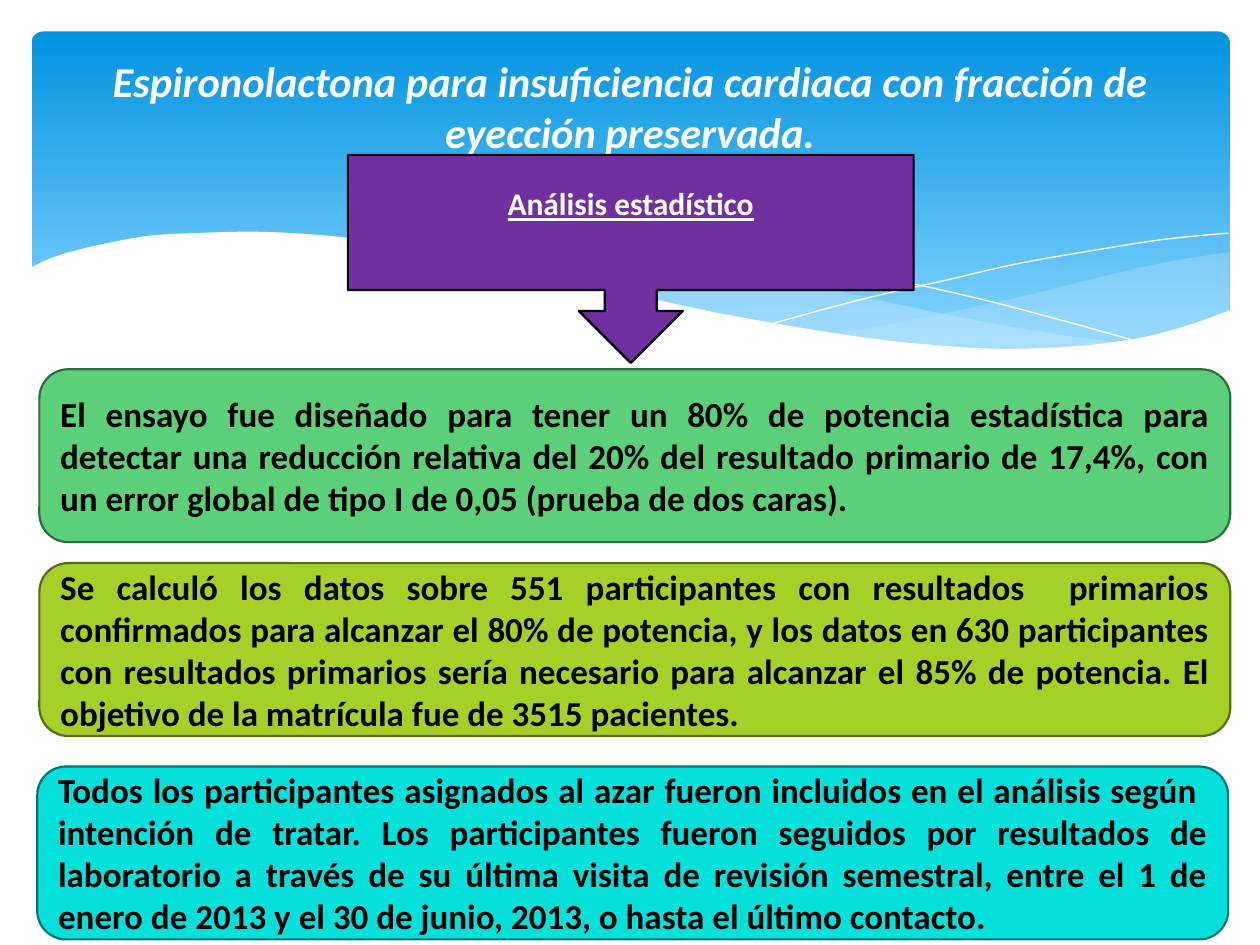
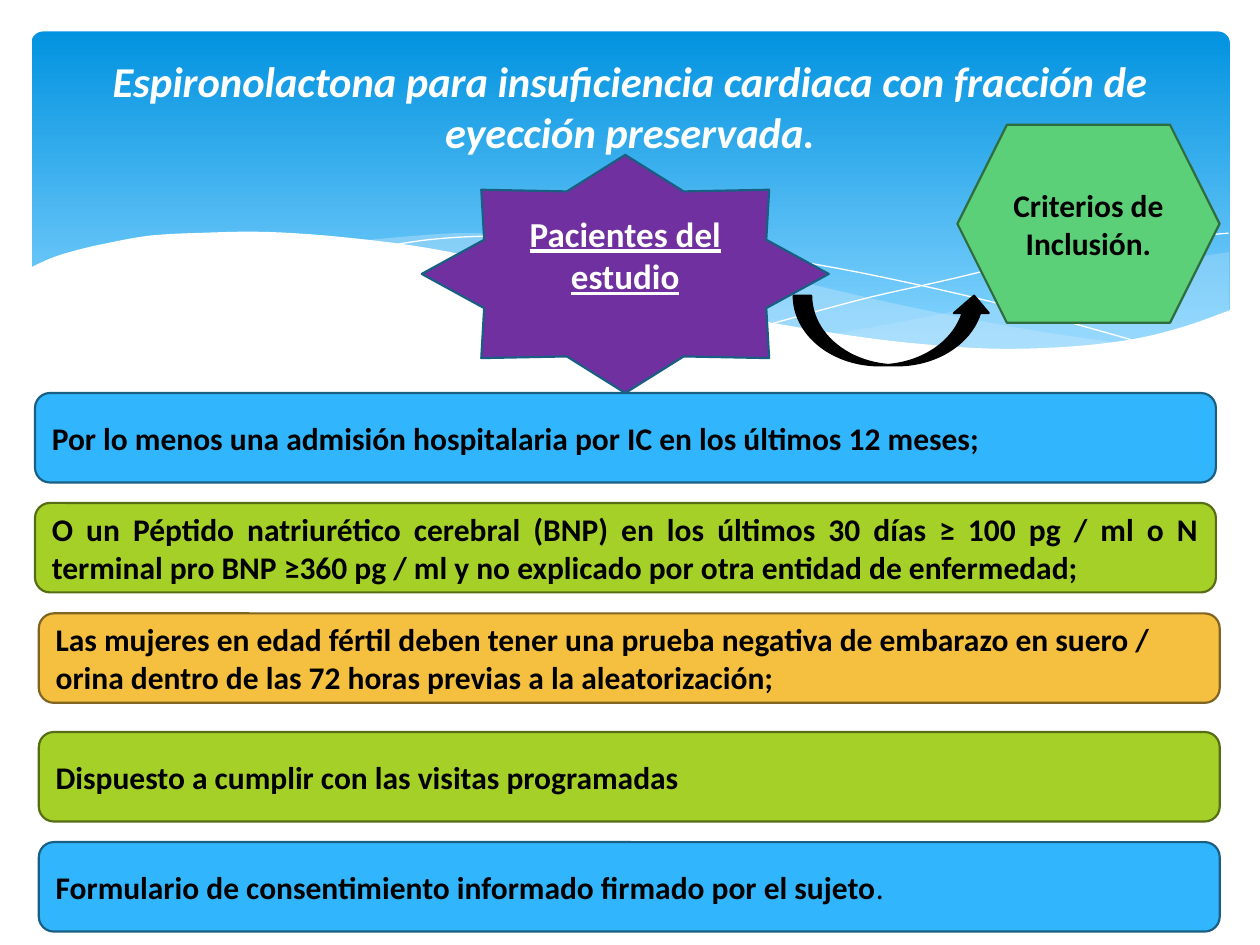
from dataclasses import dataclass

from lxml.etree import SubElement
from pptx import Presentation
from pptx.dml.color import RGBColor
from pptx.enum.shapes import MSO_SHAPE
from pptx.enum.text import MSO_ANCHOR, PP_ALIGN
from pptx.oxml.ns import qn
from pptx.util import Pt

TITLE = "Espironolactona para insuficiencia cardiaca con fracción de eyección preservada."
LEFT, JUSTIFY = PP_ALIGN.LEFT, PP_ALIGN.JUSTIFY

# Panels: text, left, top, colour, alignment
ANALYSIS_PANELS = [
    ("El ensayo fue diseñado para tener un 80% de potencia estadística para detectar una "
     "reducción relativa del 20% del resultado primario de 17,4%, con un error global de "
     "tipo I de 0,05 (prueba de dos caras).", 22.5, 211, "green", JUSTIFY),
    ("Se calculó los datos sobre 551 participantes con resultados  primarios confirmados "
     "para alcanzar el 80% de potencia, y los datos en 630 participantes con resultados "
     "primarios sería necesario para alcanzar el 85% de potencia. El objetivo de la "
     "matrícula fue de 3515 pacientes.", 22.5, 321.8, "lime", JUSTIFY),
    ("Todos los participantes asignados al azar fueron incluidos en el análisis según  "
     "intención de tratar. Los participantes fueron seguidos por resultados de laboratorio "
     "a través de su última visita de revisión semestral, entre el 1 de enero de 2013 y el "
     "30 de junio, 2013, o hasta el último contacto.", 21.3, 438, "cyan", JUSTIFY),
]
CRITERIA_PANELS = [
    ("Por lo menos una admisión hospitalaria por IC en los últimos 12 meses;",
     20, 224.6, "blue", LEFT),
    ("O un Péptido natriurético cerebral (BNP) en los últimos 30 días ≥ 100 pg / ml o N "
     "terminal pro BNP ≥360 pg / ml y no explicado por otra entidad de enfermedad;",
     20, 287.4, "lime", JUSTIFY),
    ("Las mujeres en edad fértil deben tener una prueba negativa de embarazo en suero / "
     "orina dentro de las 72 horas previas a la aleatorización;", 22.2, 350.5, "amber", LEFT),
    ("Dispuesto a cumplir con las visitas programadas", 22.2, 418.3, "lime", LEFT),
    ("Formulario de consentimiento informado firmado por el sujeto",
     22.2, 481.2, "blue", JUSTIFY),
]

# Knots of the smooth curves in the header band
RIGHT_VEIL = [
    [(702.5, 144), (663, 150.5), (620, 160.5), (579.5, 170.5), (525, 182), (476, 191)],
    [(476, 191), (508, 194.5), (536, 197.5), (562, 199.3), (586, 200), (615, 199.3),
     (640, 197.3), (663, 193.7), (683, 186.5), (702.5, 178)],
]
LEFT_VEIL = [
    [(643, 196.5), (603, 190.8), (558, 183), (508, 172.8), (453, 160), (410, 149.8),
     (370, 142.5), (335, 137.5), (302, 134.7), (274, 133.2), (248, 133.9), (206, 137.5)],
    [(206, 137.5), (246, 143.2), (291, 152), (323, 160), (382, 172.8), (433, 183.5),
     (479, 191.5), (520, 197), (557, 199.5), (589, 200), (617, 199.3), (643, 196.5)],
]
FALLING_LINE = [
    [(222.5, 140.4), (247, 136.8), (278.5, 135), (324, 135.4), (367, 138.2), (419, 144),
     (479, 153.4), (547, 167.8), (598, 180.7), (653, 196)],
]
RISING_LINE = [
    [(441, 185), (470, 177), (500, 169.2), (539, 160.5), (580, 151), (623.5, 143.3),
     (665, 136.8), (702, 133.2)],
]
WHITE_WAVE = [
    [(703.5, 177), (677, 186.5), (648, 193.7), (612, 198), (572, 199.3), (535, 197.3),
     (495, 193), (450, 186), (399, 176.5), (342, 163.4), (301, 153.4), (245, 141.8),
     (195, 135.4), (152, 132.5), (116, 133), (86, 134.6), (61, 139), (42.5, 143.3),
     (29, 147.6), (16.5, 153.4)],
    [(16.5, 237), (703.5, 237)],
]


@dataclass(frozen=True)
class Theme:
    font: str = "Calibri"
    title_size: float = 24.3
    large_size: float = 20
    body_size: float = 18
    outline: float = 1.25
    white: str = "FFFFFF"
    black: str = "000000"
    purple: str = "7030A0"
    blue_edge: str = "195F84"
    band_top: str = "0293E0"
    band_bottom: str = "83D3FE"
    veil: str = "C6E7FC"
    green: tuple = ("5BD078", "2F6D3F")
    lime: tuple = ("A5D028", "566D15")
    cyan: tuple = ("05E0DB", "037572")
    blue: tuple = ("31B6FD", "195F84")
    amber: tuple = ("F5C040", "806421")


THEME = Theme()


def rgb(color):
    return RGBColor.from_string(color)


def smooth(knots, steps=5):
    """Return points on a Catmull-Rom curve through the knots."""
    if len(knots) < 3:
        return knots
    padded = [knots[0], *knots, knots[-1]]
    points = []
    for a, b, c, d in zip(padded, padded[1:], padded[2:], padded[3:]):
        for step in range(steps):
            t = step / steps
            points.append(tuple(
                (2 * q + (r - p) * t + (2 * p - 5 * q + 4 * r - s) * t ** 2
                 + (3 * q - p - 3 * r + s) * t ** 3) / 2
                for p, q, r, s in zip(a, b, c, d)))
    return points + [knots[-1]]


def add_curve(slide, curves, fill=None, opacity=100):
    """Draw a filled outline, or a white hairline when no fill is given."""
    points = [(Pt(x), Pt(y)) for knots in curves for x, y in smooth(knots)]
    builder = slide.shapes.build_freeform(*points[0])
    builder.add_line_segments(points[1:], close=fill is not None)
    shape = builder.convert_to_shape()
    shape.shadow.inherit = False
    if fill is None:
        shape.fill.background()
        shape.line.color.rgb = rgb(THEME.white)
        shape.line.width = Pt(0)
        return
    shape.line.fill.background()
    shape.fill.solid()
    shape.fill.fore_color.rgb = rgb(fill)
    if opacity < 100:
        color = shape.element.spPr.find(qn("a:solidFill"))[0]
        SubElement(color, qn("a:alpha")).set("val", str(opacity * 1000))


def add_band(slide):
    band = slide.shapes.add_shape(
        MSO_SHAPE.ROUNDED_RECTANGLE, Pt(18), Pt(18), Pt(684.7), Pt(194.4))
    band.adjustments[0] = 0.034
    band.shadow.inherit = False
    band.line.fill.background()
    band.fill.gradient()
    band.fill.gradient_angle = 270
    stops = zip(band.fill.gradient_stops, (THEME.band_top, THEME.band_bottom), (0, 0.9))
    for stop, color, position in stops:
        stop.color.rgb = rgb(color)
        stop.position = position
    add_curve(slide, RIGHT_VEIL, THEME.veil, 29)
    add_curve(slide, LEFT_VEIL, THEME.veil, 40)
    add_curve(slide, FALLING_LINE)
    add_curve(slide, RISING_LINE)
    add_curve(slide, WHITE_WAVE, THEME.white)


def format_run(run, size, color, bold=True, italic=False, underline=False):
    font = run.font
    font.name, font.size, font.color.rgb = THEME.font, Pt(size), rgb(color)
    font.bold, font.italic, font.underline = bold, italic, underline


def add_titled_slide(presentation):
    slide = presentation.slides.add_slide(presentation.slide_layouts[5])
    add_band(slide)
    title = slide.shapes.title
    slide.shapes.element.append(title.element)  # in front of the band
    title.left, title.top, title.width, title.height = Pt(36), Pt(26.6), Pt(648), Pt(98.6)
    frame = title.text_frame
    frame.text = TITLE
    frame.word_wrap = True
    frame.vertical_anchor = MSO_ANCHOR.TOP
    frame.margin_top = Pt(5)
    frame.paragraphs[0].alignment = PP_ALIGN.CENTER
    format_run(frame.paragraphs[0].runs[0], THEME.title_size, THEME.white, italic=True)
    return slide


def add_block(slide, kind, box, colors, text="", size=THEME.body_size,
              alignment=PP_ALIGN.CENTER, color=THEME.black, underline=False):
    shape = slide.shapes.add_shape(kind, *map(Pt, box))
    shape.shadow.inherit = False
    fill, edge = colors
    shape.fill.solid()
    shape.fill.fore_color.rgb = rgb(fill)
    shape.line.color.rgb = rgb(edge)
    shape.line.width = Pt(THEME.outline)
    if text:
        frame = shape.text_frame
        frame.text = text
        frame.word_wrap = True
        frame.vertical_anchor = MSO_ANCHOR.MIDDLE
        frame.paragraphs[0].alignment = alignment
        format_run(frame.paragraphs[0].runs[0], size, color, underline=underline)
    return shape


def add_heading(slide, kind, box, edge, text, size):
    """Add the purple heading, its text raised above the middle."""
    shape = add_block(slide, kind, box, (THEME.purple, edge), text, size,
                      color=THEME.white, underline=True)
    shape.text_frame.margin_bottom = Pt(25.6)


def add_panels(slide, panels, width, height, size):
    return [add_block(slide, MSO_SHAPE.ROUNDED_RECTANGLE, (left, top, width, height),
                      getattr(THEME, color), text, size, alignment)
            for text, left, top, color, alignment in panels]


def build_analysis(presentation):
    slide = add_titled_slide(presentation)
    add_panels(slide, ANALYSIS_PANELS, 680.5, 98.8, THEME.large_size)
    add_heading(slide, MSO_SHAPE.DOWN_ARROW_CALLOUT, (198.8, 88.5, 323.3, 118.9),
                THEME.black, "Análisis estadístico", THEME.body_size)


def build_criteria(presentation):
    slide = add_titled_slide(presentation)
    add_heading(slide, MSO_SHAPE.STAR_8_POINT, (241, 88.5, 232.6, 136.1),
                THEME.blue_edge, "Pacientes del estudio", THEME.large_size)
    panels = add_panels(slide, CRITERIA_PANELS, 674.8, 51.1, THEME.body_size)
    full_stop = panels[-1].text_frame.paragraphs[0].add_run()
    full_stop.text = "."
    format_run(full_stop, THEME.body_size, THEME.black, bold=False)
    add_block(slide, MSO_SHAPE.HEXAGON, (547.1, 71.3, 149.8, 113.2), THEME.green,
              "Criterios de Inclusión.")
    add_block(slide, MSO_SHAPE.CURVED_UP_ARROW, (453.6, 169, 113, 39.8),
              (THEME.black, THEME.black))


def main():
    presentation = Presentation()
    presentation.slide_width, presentation.slide_height = Pt(720), Pt(540)
    build_analysis(presentation)
    build_criteria(presentation)
    presentation.save("out.pptx")


if __name__ == "__main__":
    main()
